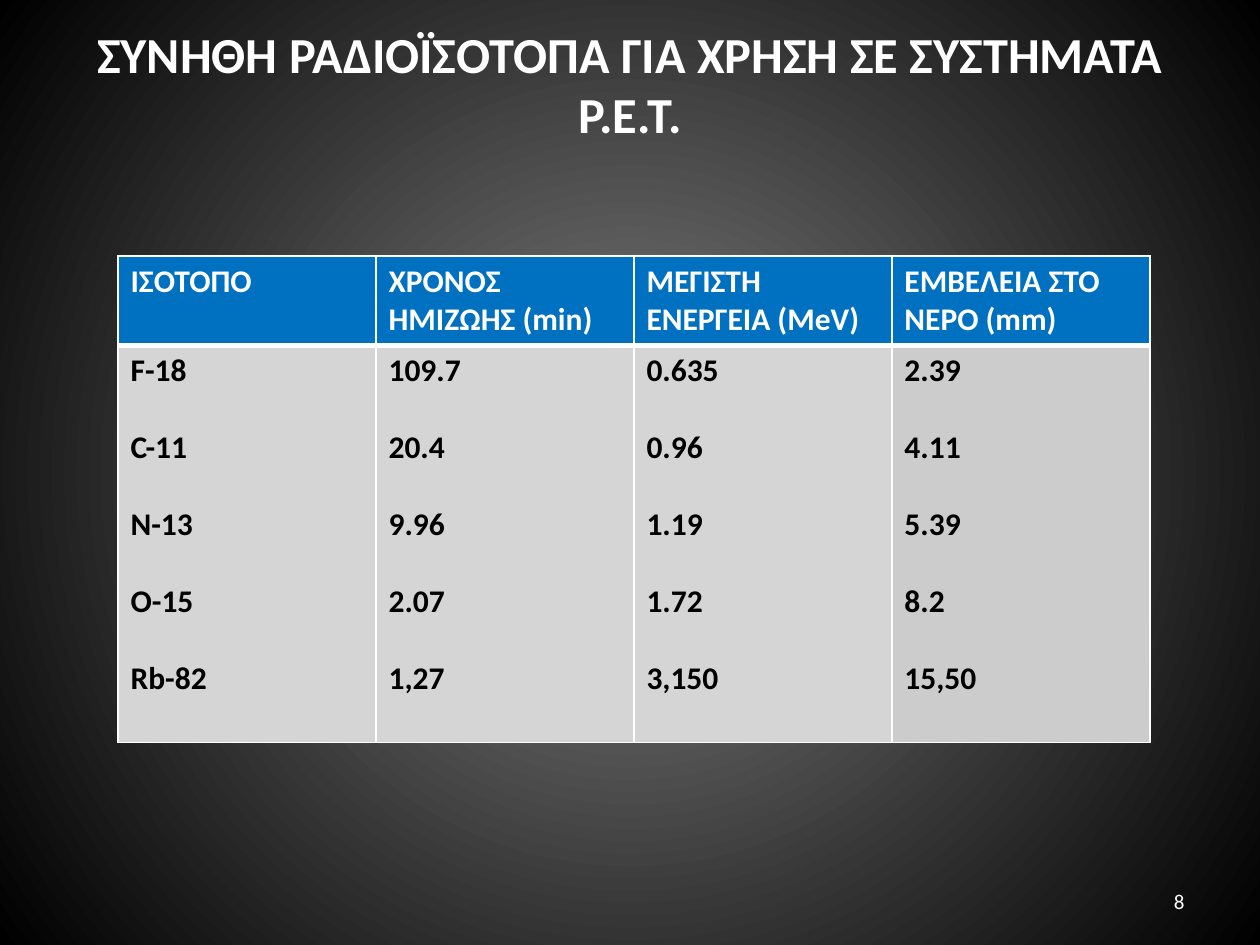
from dataclasses import dataclass

from lxml import etree
from pptx import Presentation
from pptx.dml.color import RGBColor
from pptx.enum.text import MSO_ANCHOR, MSO_AUTO_SIZE, PP_ALIGN
from pptx.oxml.ns import qn
from pptx.util import Emu, Pt

SLIDE_W, SLIDE_H = 1260, 945
EMU_PER_PX = 9144000 / SLIDE_W
FONT = "Calibri"
WHITE = RGBColor(0xFF, 0xFF, 0xFF)
BLACK = RGBColor(0x00, 0x00, 0x00)
GRAY = RGBColor(0x7F, 0x7F, 0x7F)
BLUE = RGBColor(0x00, 0x70, 0xC0)
LIGHT = RGBColor(0xD5, 0xD5, 0xD5)
LAST_LIGHT = RGBColor(0xCC, 0xCC, 0xCC)
LEFT, CENTER, RIGHT = PP_ALIGN.LEFT, PP_ALIGN.CENTER, PP_ALIGN.RIGHT
MIDDLE = MSO_ANCHOR.MIDDLE
NO_AUTOFIT = MSO_AUTO_SIZE.NONE
TITLE_ONLY = 5

TITLE_BOX = (63, 38, 1134, 91)
NUMBER_BOX = (903, 876, 294, 50)
TABLE_X, TABLE_Y, COL_W = 118, 256, 258
HEADER_H, BODY_H = 89, 397
LINE_GAP = Pt(22)


@dataclass(frozen=True)
class Column:
    header: str
    values: tuple[str, ...]
    fill: RGBColor = LIGHT


COLUMNS = (
    Column("ΙΣΟΤΟΠΟ", ("F-18", "C-11", "N-13", "O-15", "Rb-82")),
    Column("ΧΡΟΝΟΣ ΗΜΙΖΩΗΣ (min)", ("109.7", "20.4", "9.96", "2.07", "1,27")),
    Column("ΜΕΓΙΣΤΗ ΕΝΕΡΓΕΙΑ (MeV)", ("0.635", "0.96", "1.19", "1.72", "3,150")),
    Column("ΕΜΒΕΛΕΙΑ ΣΤΟ ΝΕΡΟ (mm)", ("2.39", "4.11", "5.39", "8.2", "15,50"), LAST_LIGHT),
)


def px(n: int) -> Emu:
    return Emu(round(n * EMU_PER_PX))


def write(tf, lines: tuple[str, ...], size: float, color: RGBColor,
          bold: bool = True, align: PP_ALIGN = LEFT) -> None:
    font_values = {"name": FONT, "size": Pt(size), "bold": bold}
    for i, line in enumerate(lines):
        p = tf.add_paragraph() if i else tf.paragraphs[0]
        p.alignment = align
        p.space_before = LINE_GAP if i else Pt(0)
        r = p.add_run()
        r.text = line
        for name, value in font_values.items():
            setattr(r.font, name, value)
        r.font.color.rgb = color


def set_frame(tf) -> None:
    values = {"word_wrap": True, "auto_size": NO_AUTOFIT, "vertical_anchor": MIDDLE}
    for name, value in values.items():
        setattr(tf, name, value)


def set_borders(cell, top: int, bottom: int) -> None:
    tc_pr = cell._tc.get_or_add_tcPr()
    widths = {"a:lnL": 1, "a:lnR": 1, "a:lnT": top, "a:lnB": bottom}
    for i, (tag, width) in enumerate(widths.items()):
        ln = etree.Element(qn(tag), w=str(Pt(width)))
        fill = etree.SubElement(ln, qn("a:solidFill"))
        etree.SubElement(fill, qn("a:srgbClr"), val=str(WHITE))
        tc_pr.insert(i, ln)


def fill_cell(cell, lines: tuple[str, ...], fill: RGBColor, color: RGBColor,
              top: int, bottom: int) -> None:
    cell.fill.solid()
    cell.fill.fore_color.rgb = fill
    set_borders(cell, top, bottom)
    write(cell.text_frame, lines, 18, color)


def set_background(s) -> None:
    fill = s.background.fill
    fill.gradient()
    for stop, position, color in zip(fill.gradient_stops, (0, 1), (GRAY, BLACK)):
        stop.position = position
        stop.color.rgb = color
    grad = s._element.find(".//" + qn("a:gradFill"))
    circle = etree.Element(qn("a:path"), {"path": "circle"})
    etree.SubElement(circle, qn("a:fillToRect"), l="50000", t="50000", r="50000", b="50000")
    grad.replace(grad.find(qn("a:lin")), circle)


def add_title(s) -> None:
    sp = s.shapes.title
    sp.left, sp.top, sp.width, sp.height = map(px, TITLE_BOX)
    set_frame(sp.text_frame)
    write(sp.text_frame, ("ΣΥΝΗΘΗ ΡΑΔΙΟΪΣΟΤΟΠΑ ΓΙΑ ΧΡΗΣΗ ΣΕ ΣΥΣΤΗΜΑΤΑ P.E.T.",),
          28.8, WHITE, align=CENTER)


def add_isotope_table(s) -> None:
    table = s.shapes.add_table(2, len(COLUMNS), px(TABLE_X), px(TABLE_Y),
                               px(COL_W * len(COLUMNS)), px(HEADER_H + BODY_H)).table
    table.rows[0].height, table.rows[1].height = px(HEADER_H), px(BODY_H)
    for i, column in enumerate(COLUMNS):
        table.columns[i].width = px(COL_W)
        fill_cell(table.cell(0, i), (column.header,), BLUE, WHITE, 1, 3)
        fill_cell(table.cell(1, i), column.values, column.fill, BLACK, 3, 1)


def add_slide_number(s) -> None:
    tf = s.shapes.add_textbox(*map(px, NUMBER_BOX)).text_frame
    set_frame(tf)
    write(tf, ("8",), 12, WHITE, bold=False, align=RIGHT)


def main() -> None:
    prs = Presentation()
    prs.slide_width, prs.slide_height = px(SLIDE_W), px(SLIDE_H)
    s = prs.slides.add_slide(prs.slide_layouts[TITLE_ONLY])
    set_background(s)
    add_title(s)
    add_isotope_table(s)
    add_slide_number(s)
    prs.save("out.pptx")


if __name__ == "__main__":
    main()
